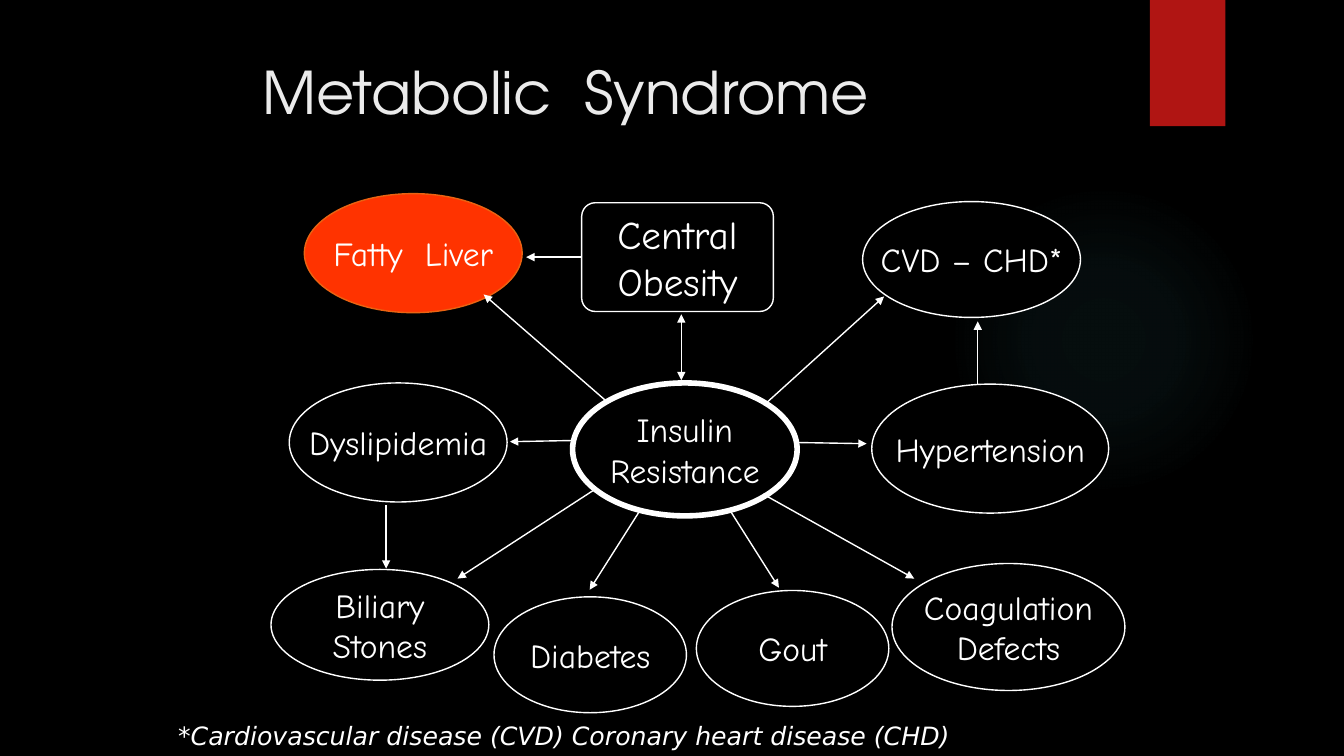
from lxml import etree
from pptx import Presentation
from pptx.dml.color import RGBColor
from pptx.enum.shapes import MSO_CONNECTOR, MSO_SHAPE
from pptx.enum.text import MSO_ANCHOR, MSO_AUTO_SIZE, PP_ALIGN
from pptx.oxml import parse_xml
from pptx.oxml.ns import nsdecls, qn
from pptx.util import Cm, Pt

OVAL, RECT, ROUNDED = MSO_SHAPE.OVAL, MSO_SHAPE.RECTANGLE, MSO_SHAPE.ROUNDED_RECTANGLE
STRAIGHT = MSO_CONNECTOR.STRAIGHT
TOP, MIDDLE = MSO_ANCHOR.TOP, MSO_ANCHOR.MIDDLE
NO_AUTOFIT = MSO_AUTO_SIZE.NONE
LEFT, CENTER = PP_ALIGN.LEFT, PP_ALIGN.CENTER
LEFT_SIDE = 1
TITLE_ONLY = 5

BLACK = RGBColor(0x00, 0x00, 0x00)
WHITE = RGBColor(0xFF, 0xFF, 0xFF)
TITLE_GREY = RGBColor(0xEB, 0xEB, 0xEB)
RED = RGBColor(0xB0, 0x15, 0x13)
ORANGE = RGBColor(0xFF, 0x33, 0x00)
ORANGE_LINE = RGBColor(0xEA, 0x63, 0x12)
GLOW = RGBColor(0x50, 0xB9, 0xC1)

TITLE_FONT, NODE_FONT, NOTE_FONT = "TeX Gyre Adventor", "Comic Neue", "DejaVu Sans"

# Ovals in cm: lines of text, left, top, width, height
OVALS = [
    (["Dyslipidemia"], 7.29, 9.65, 5.49, 3),
    (["Coagulation", "Defects"], 22.48, 14.2, 5.87, 3.2),
    (["Biliary", "Stones"], 6.83, 14.35, 5.49, 2.79),
    (["Diabetes"], 12.45, 15.04, 4.85, 2.92),
    (["Gout"], 17.55, 14.88, 4.85, 2.92),
    (["Hypertension"], 21.97, 9.68, 5.97, 3.25),
    (["CVD – CHD*"], 21.74, 5.08, 5.49, 2.92),
]

# Arrows in cm: start x, start y, end x, end y
ARROWS = [
    (20.07, 11.15, 21.84, 11.18),  # insulin resistance to hypertension
    (19.23, 12.45, 23.04, 14.58),  # to coagulation defects
    (18.39, 12.85, 19.63, 14.81),  # to gout
    (16.15, 12.83, 14.86, 14.86),  # to diabetes
    (15.01, 12.32, 11.53, 14.58),  # to biliary stones
    (14.43, 11.1, 12.85, 11.13),   # to dyslipidemia
    (15.34, 10.16, 12.19, 7.42),   # to fatty liver
    (19.25, 10.21, 22.28, 7.47),   # to CVD – CHD
    (9.73, 12.73, 9.73, 14.33),    # dyslipidemia to biliary stones
    (24.64, 9.68, 24.64, 8.1),     # hypertension to CVD – CHD
]


def add_text(tf, lines, font, size, color, align, italic=False):
    for i, line in enumerate(lines):
        p = tf.add_paragraph() if i else tf.paragraphs[0]
        p.alignment = align
        r = p.add_run()
        r.text = line
        r.font.name = font
        r.font.size = Pt(size)
        r.font.italic = italic
        r.font.color.rgb = color


def add_plain_shape(s, kind, left, top, width, height, fill):
    sp = s.shapes.add_shape(kind, Cm(left), Cm(top), Cm(width), Cm(height))
    sp.shadow.inherit = False
    sp.fill.solid()
    sp.fill.fore_color.rgb = fill
    sp.line.fill.background()
    return sp


def add_node(s, lines, left, top, width, height, kind=OVAL,
             fill=BLACK, line=WHITE, weight=1, size=24):
    sp = add_plain_shape(s, kind, left, top, width, height, fill)
    sp.line.color.rgb = line
    sp.line.width = Pt(weight)
    tf = sp.text_frame
    tf.word_wrap = False
    tf.vertical_anchor = MIDDLE
    add_text(tf, lines, NODE_FONT, size, WHITE, CENTER)
    return sp


def add_arrow(s, x1, y1, x2, y2, ends=("tailEnd",)):
    line = s.shapes.add_connector(STRAIGHT, Cm(x1), Cm(y1), Cm(x2), Cm(y2))
    line.line.color.rgb = WHITE
    line.line.width = Pt(1)
    ln = line.line._get_or_add_ln()
    for end in ends:
        etree.SubElement(ln, qn(f"a:{end}"), type="triangle")
    etree.SubElement(line._element.spPr, qn("a:effectLst"))
    return line


def add_glow(s, left, top, size):
    sp = add_plain_shape(s, OVAL, left, top, size, size, GLOW)
    stops = "".join(
        f'<a:gs pos="{pos}000"><a:srgbClr val="{GLOW}"><a:alpha val="{alpha}000"/>'
        "</a:srgbClr></a:gs>" for pos, alpha in ((0, 7), (36, 6), (69, 0)))
    gradient = parse_xml(
        f'<a:gradFill {nsdecls("a")} rotWithShape="1"><a:gsLst>{stops}</a:gsLst>'
        '<a:path path="circle"><a:fillToRect l="50000" t="50000" r="50000" b="50000"/>'
        "</a:path></a:gradFill>")
    spPr = sp._element.spPr
    spPr.replace(spPr.find(qn("a:solidFill")), gradient)


def add_title(s, text):
    title = s.shapes.title
    title.left, title.top = Cm(6.35), Cm(1.27)
    title.width, title.height = Cm(21.16), Cm(2.74)
    tf = title.text_frame
    tf.auto_size = NO_AUTOFIT
    tf.vertical_anchor = TOP
    add_text(tf, [text], TITLE_FONT, 42, TITLE_GREY, LEFT)


def add_footnote(s, text):
    box = s.shapes.add_textbox(Cm(4.24), Cm(18.03), Cm(23.9), Cm(1.02))
    box.text_frame.word_wrap = True
    add_text(box.text_frame, [text], NOTE_FONT, 18, WHITE, LEFT, italic=True)


def main():
    prs = Presentation()
    prs.slide_width, prs.slide_height = Cm(33.87), Cm(19.05)
    s = prs.slides.add_slide(prs.slide_layouts[TITLE_ONLY])

    # Background, decoration and title
    s.background.fill.solid()
    s.background.fill.fore_color.rgb = BLACK
    add_glow(s, 23.9, 4.65, 7.82)
    add_plain_shape(s, RECT, 28.98, 0, 1.9, 3.18, RED)
    add_title(s, "Metabolic  Syndrome")

    # Conditions
    obesity = add_node(s, ["Central", "Obesity"], 14.66, 5.11, 4.83, 2.74,
                       kind=ROUNDED, size=28)
    obesity.adjustments[0] = 0.125
    add_node(s, ["Insulin", "Resistance"], 14.43, 9.65, 5.66, 3.35, weight=4)
    add_node(s, ["Fatty  Liver"], 7.67, 4.88, 5.49, 3, fill=ORANGE, line=ORANGE_LINE)
    for oval in OVALS:
        add_node(s, *oval)

    # Arrows
    for arrow in ARROWS:
        add_arrow(s, *arrow)
    add_arrow(s, 17.17, 7.92, 17.17, 9.58, ends=("headEnd", "tailEnd"))
    to_liver = add_arrow(s, 14.66, 6.48, 13.26, 6.48)
    to_liver.begin_connect(obesity, LEFT_SIDE)

    add_footnote(s, "*Cardiovascular disease (CVD) Coronary heart disease (CHD)")
    prs.save("out.pptx")


if __name__ == "__main__":
    main()
